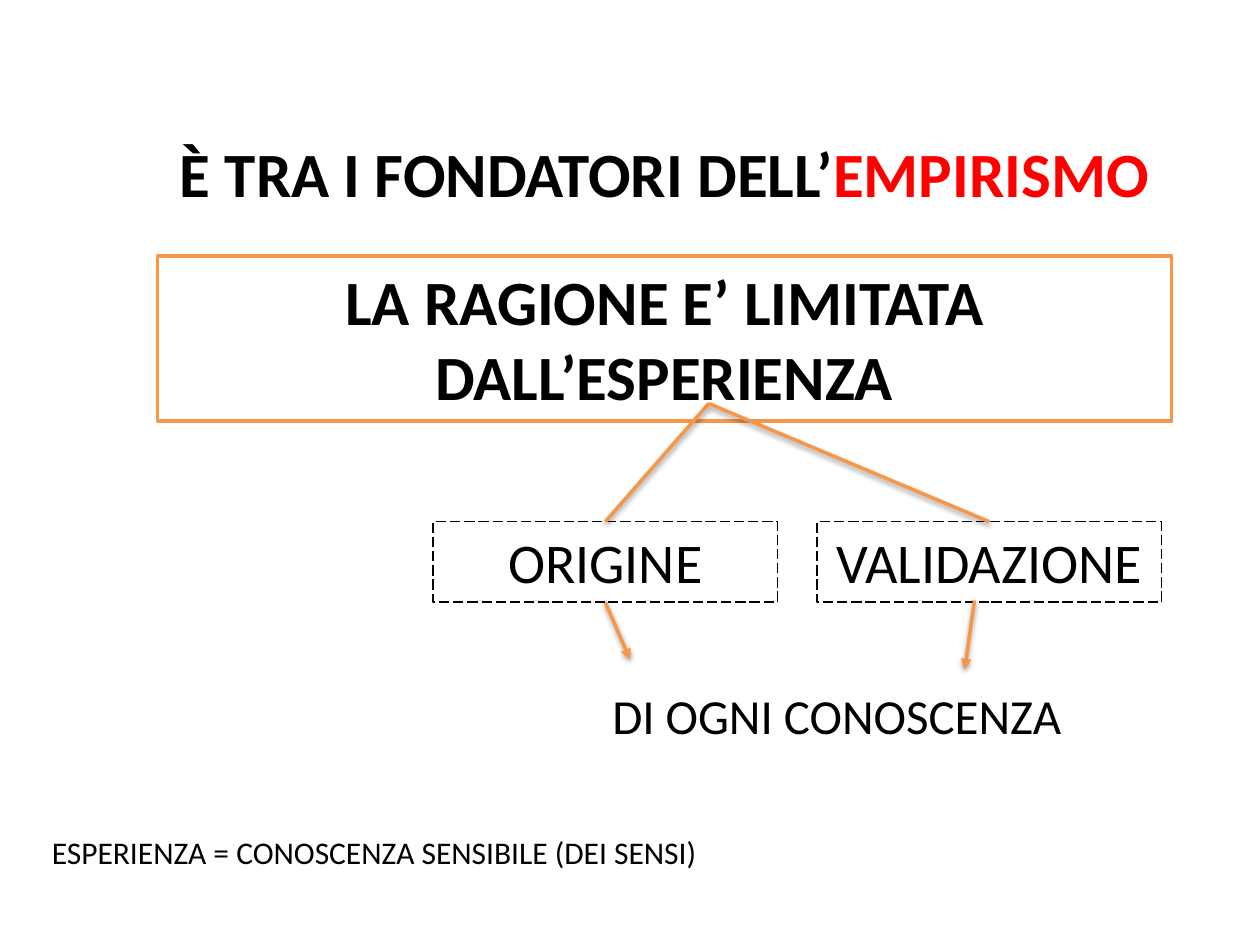
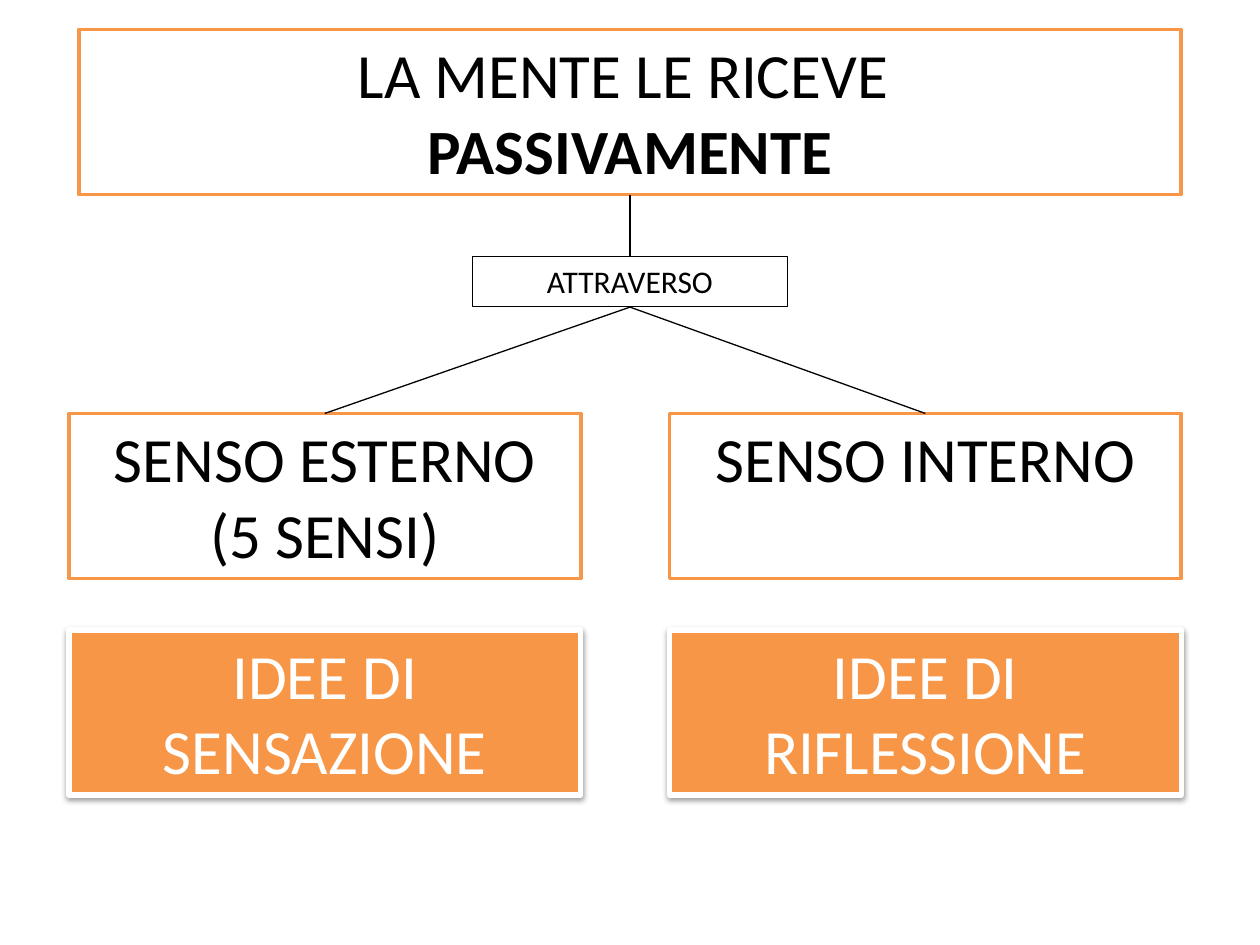
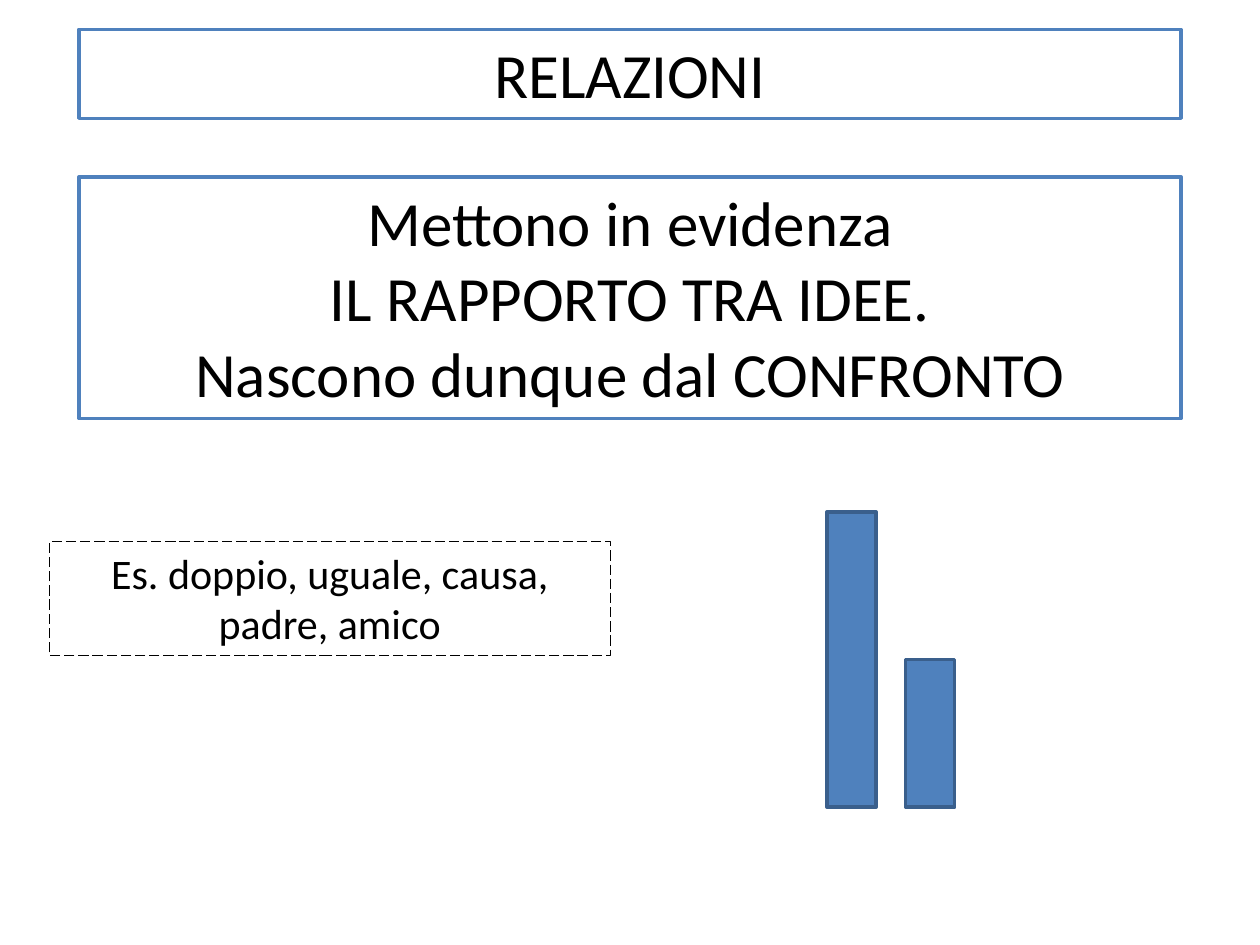
import pptx
import pptx.dml.color
import pptx.enum.dml
import pptx.enum.shapes
import pptx.enum.text
import pptx.oxml.ns
import pptx.util
from dataclasses import dataclass
from lxml import etree


@dataclass(frozen=True)
class Theme:
    font: str = "Calibri"
    black: str = "000000"
    white: str = "FFFFFF"
    red: str = "FF0000"
    orange: str = "F79646"
    blue: str = "4F81BD"
    dark_blue: str = "3A5F8C"
    heading: int = 36
    branch: int = 32
    result: int = 28
    example: int = 24
    note: int = 18
    thick: float = 3
    medium: float = 2
    thin: float = 0.75
    hairline: float = 0.25


theme = Theme()
rgb = pptx.dml.color.RGBColor.from_string
qn = pptx.oxml.ns.qn
RECTANGLE = pptx.enum.shapes.MSO_SHAPE.RECTANGLE
CENTER = pptx.enum.text.PP_ALIGN.CENTER

deck = pptx.Presentation()
deck.slide_width = pptx.util.Inches(10)
deck.slide_height = pptx.util.Inches(7.5)
blank = deck.slide_layouts[6]

# Grid of 64 columns by 48 rows: the cells are square
cell = deck.slide_width / 64
line_height = 1.21  # share of the type size
text_margin = pptx.util.Inches(0.1)  # top and bottom inset together


def add_box(slide, col, row, cols, lines=(), size=theme.heading, rows=None, color=theme.black,
            bold=None, align=CENTER, fill=None, outline=None, weight=theme.medium,
            dashed=False, shadow=False):
    """A box as high as its lines of text, unless a number of rows is given."""
    height = rows * cell if rows else text_margin + len(lines) * pptx.util.Pt(size) * line_height
    place = [round(length) for length in (col * cell, row * cell, cols * cell, height)]
    if outline:
        box = slide.shapes.add_shape(RECTANGLE, *place)
        box.line.color.rgb = rgb(outline)
        box.line.width = pptx.util.Pt(weight)
        if dashed:
            box.line.dash_style = pptx.enum.dml.MSO_LINE.LONG_DASH
        box.shadow.inherit = False
        if shadow:
            add_shadow_to = box._element.spPr.find(qn("a:effectLst"))
            add_shadow_to.append(etree.fromstring(SHADOW))
    else:
        box = slide.shapes.add_textbox(*place)
    if fill:
        box.fill.solid()
        box.fill.fore_color.rgb = rgb(fill)
    else:
        box.fill.background()

    frame = box.text_frame
    frame.word_wrap = True
    frame.vertical_anchor = pptx.enum.text.MSO_ANCHOR.TOP
    frame.text = "\n".join(line for line in lines if line)
    for paragraph in frame.paragraphs:
        paragraph.alignment = align
        paragraph.font.name = theme.font
        paragraph.font.size = pptx.util.Pt(size)
        paragraph.font.bold = bold
        paragraph.font.color.rgb = rgb(color)
    return box


def add_link(slide, start, end, color=theme.black, weight=theme.thin, arrow=False, shadow=False):
    """A straight line between two (column, row) points."""
    points = [round(length * cell) for length in (*start, *end)]
    link = slide.shapes.add_connector(pptx.enum.shapes.MSO_CONNECTOR.STRAIGHT, *points)
    link.line.color.rgb = rgb(color)
    link.line.width = pptx.util.Pt(weight)
    properties = link._element.spPr
    if arrow:
        etree.SubElement(properties.find(qn("a:ln")), qn("a:tailEnd"), type="triangle")
    effects = etree.SubElement(properties, qn("a:effectLst"))
    if shadow:
        effects.append(etree.fromstring(SHADOW))


SHADOW = f"""<a:outerShdw xmlns:a="http://schemas.openxmlformats.org/drawingml/2006/main"
    blurRad="40000" dist="20000" dir="5400000" rotWithShape="0">
    <a:srgbClr val="{theme.black}"><a:alpha val="38000"/></a:srgbClr></a:outerShdw>"""
orange_frame = dict(fill=theme.white, outline=theme.orange)
blue_frame = dict(fill=theme.white, outline=theme.blue)
dashed_frame = dict(outline=theme.black, weight=theme.thin, dashed=True)

# Slide 1: empiricism
empiricism = deck.slides.add_slide(blank)
founders = add_box(empiricism, 8, 6.5, 51.5, ["È TRA I FONDATORI DELL’"], bold=True)
keyword = founders.text_frame.paragraphs[0].add_run()
keyword.text = "EMPIRISMO"
keyword.font.color.rgb = rgb(theme.red)
add_box(empiricism, 8, 13, 51.5, ["LA RAGIONE E’ LIMITATA DALL’ESPERIENZA"],
        rows=8.4, bold=True, **orange_frame)
for branch, col in (("ORIGINE", 22), ("VALIDAZIONE", 41.5)):
    add_box(empiricism, col, 26.5, 17.5, [branch], theme.branch, **dashed_frame)
    add_link(empiricism, (36, 20.5), (col + 8.75, 26.5), theme.orange, theme.medium, shadow=True)
for start, end in (((30.75, 30.6), (32, 33.5)), ((49.5, 30.5), (49, 34))):
    add_link(empiricism, start, end, theme.orange, theme.medium, arrow=True, shadow=True)
add_box(empiricism, 29, 34.5, 27, ["DI OGNI CONOSCENZA"], theme.result)
add_box(empiricism, 2, 42, 35, ["ESPERIENZA = CONOSCENZA SENSIBILE (DEI SENSI)"],
        theme.note, align=None)

# Slide 2: how the mind receives ideas
mind = deck.slides.add_slide(blank)
receives = add_box(mind, 4, 1.5, 56, ["LA MENTE LE RICEVE ", "PASSIVAMENTE"], **orange_frame)
receives.text_frame.paragraphs[1].font.bold = True
add_box(mind, 24, 13, 16, ["ATTRAVERSO"], theme.note,
        outline=theme.black, weight=theme.hairline)
add_link(mind, (32, 9.9), (32, 13))
senses = (
    (3.5, ["SENSO ESTERNO", "(5 SENSI)"], ["IDEE DI", "SENSAZIONE"]),
    (34, ["SENSO INTERNO"], ["IDEE DI", "RIFLESSIONE"]),
)
for col, sense, ideas in senses:
    add_box(mind, col, 21, 26, sense, rows=8.4, **orange_frame)
    add_link(mind, (32, 15.6), (col + 13, 21))
    add_box(mind, col, 32, 26, ideas, color=theme.white, fill=theme.orange,
            outline=theme.white, weight=theme.thick, shadow=True)

# Slide 3: relations
relations = deck.slides.add_slide(blank)
add_box(relations, 4, 1.5, 56, ["RELAZIONI"], **blue_frame)
add_box(relations, 4, 9, 56,
        ["Mettono in evidenza", "IL RAPPORTO TRA IDEE.", "Nascono dunque dal CONFRONTO"],
        **blue_frame)
add_box(relations, 2.5, 27.5, 28.5, ["Es. doppio, uguale, causa, padre, amico"],
        theme.example, rows=5.8, **dashed_frame)

# Two bars on one base line, one twice as high as the other
base_row = 41
for col, bar_rows in ((42, 15), (46, 7.5)):
    add_box(relations, col, base_row - bar_rows, 2.5, rows=bar_rows,
            fill=theme.blue, outline=theme.dark_blue)

deck.save("out.pptx")
